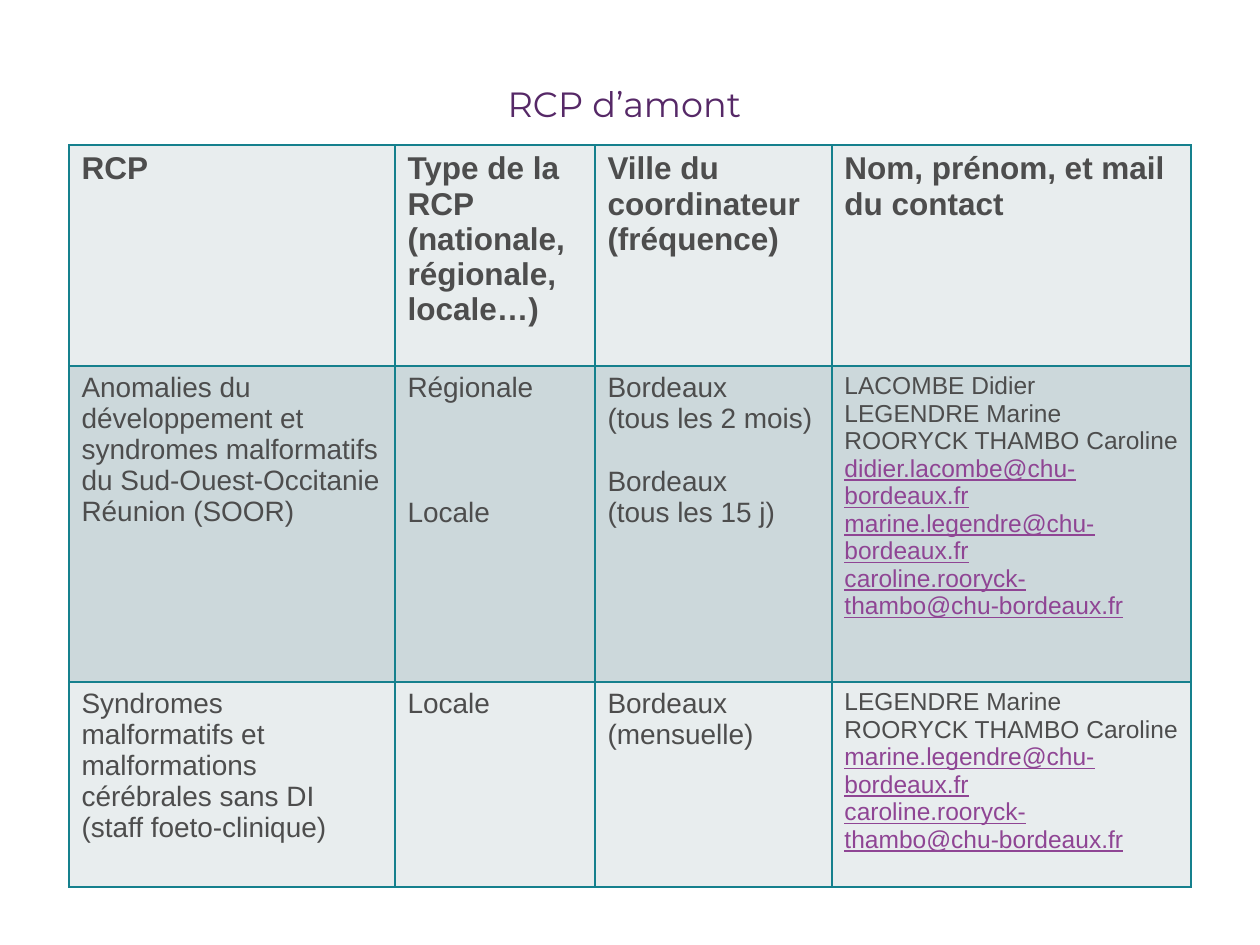
from dataclasses import dataclass

from lxml.etree import SubElement
from pptx import Presentation
from pptx.dml.color import RGBColor
from pptx.enum.text import MSO_ANCHOR, PP_ALIGN
from pptx.oxml.ns import qn
from pptx.util import Emu, Pt

PURPLE = RGBColor(0x56, 0x28, 0x67)
LINK = RGBColor(0x8F, 0x45, 0x94)
GREY = RGBColor(0x4D, 0x4D, 0x4D)
TEAL = RGBColor(0x15, 0x80, 0x8D)
PALE = RGBColor(0xE8, 0xED, 0xEE)
DARKER = RGBColor(0xCC, 0xD8, 0xDB)

PX_PER_INCH = 126
LINE_HEIGHT = 1.117
COLUMN_WIDTHS = [326, 200, 237, 359]
ROW_HEIGHTS = [221, 316, 205]
HEADER_SIZE, BODY_SIZE, CONTACT_SIZE = 18, 16, 14


@dataclass
class Line:
    text: str
    lines_before: int = 0


LEGENDRE = Line("LEGENDRE Marine")
ROORYCK = Line("ROORYCK THAMBO Caroline")
LEGENDRE_MAIL = Line("marine.legendre@chu-bordeaux.fr")
ROORYCK_MAIL = Line("caroline.rooryck-thambo@chu-bordeaux.fr")

ROWS = [
    [
        [Line("RCP")],
        [Line("Type de la RCP (nationale, régionale, locale…)")],
        [Line("Ville du coordinateur"), Line("(fréquence)")],
        [Line("Nom, prénom, et mail du contact")],
    ],
    [
        [Line("Anomalies du développement et syndromes malformatifs "
              "du Sud-Ouest-Occitanie Réunion (SOOR)")],
        [Line("Régionale"), Line("Locale", 3)],
        [Line("Bordeaux"), Line("(tous les 2 mois)"),
         Line("Bordeaux", 1), Line("(tous les 15 j)")],
        [Line("LACOMBE Didier"), LEGENDRE, ROORYCK,
         Line("didier.lacombe@chu-bordeaux.fr"), LEGENDRE_MAIL, ROORYCK_MAIL],
    ],
    [
        [Line("Syndromes malformatifs et malformations cérébrales sans DI"),
         Line("(staff foeto-clinique)")],
        [Line("Locale")],
        [Line("Bordeaux"), Line("(mensuelle)")],
        [LEGENDRE, ROORYCK, LEGENDRE_MAIL, ROORYCK_MAIL],
    ],
]


def px(length):
    return Emu(round(length * 914400 / PX_PER_INCH))


def add_run(paragraph, text, font_name, size, color, bold=False, underline=False):
    run = paragraph.add_run()
    run.text = text
    run.font.name = font_name
    run.font.size = Pt(size)
    run.font.color.rgb = color
    run.font.bold = bold
    run.font.underline = underline


def format_title(title):
    title.left, title.top, title.width, title.height = px(228), px(76), px(793), px(79)
    frame = title.text_frame
    frame.word_wrap = True
    frame.vertical_anchor = MSO_ANCHOR.TOP
    paragraph = frame.paragraphs[0]
    paragraph.alignment = PP_ALIGN.CENTER
    add_run(paragraph, "RCP d’amont", "Montserrat", 20, PURPLE)


def set_borders(cell):
    properties = cell._tc.get_or_add_tcPr()
    for side in ("lnL", "lnR", "lnT", "lnB"):
        border = SubElement(properties, qn(f"a:{side}"), w=str(Pt(1)))
        fill = SubElement(border, qn("a:solidFill"))
        SubElement(fill, qn("a:srgbClr"), val=str(TEAL))


def fill_cell(cell, lines, color, size, bold):
    set_borders(cell)
    cell.fill.solid()
    cell.fill.fore_color.rgb = color
    frame = cell.text_frame
    for index, line in enumerate(lines):
        paragraph = frame.add_paragraph() if index else frame.paragraphs[0]
        if line.lines_before:
            paragraph.space_before = Pt(round(line.lines_before * size * LINE_HEIGHT, 1))
        is_mail = "@" in line.text
        add_run(paragraph, line.text, "Arial", size, LINK if is_mail else GREY,
                bold, is_mail)


def add_meeting_table(slide):
    table = slide.shapes.add_table(
        len(ROWS), len(COLUMN_WIDTHS), px(69), px(145),
        px(sum(COLUMN_WIDTHS)), px(sum(ROW_HEIGHTS))).table
    table.horz_banding = False
    for column, width in zip(table.columns, COLUMN_WIDTHS):
        column.width = px(width)
    for row_index, (row, height) in enumerate(zip(table.rows, ROW_HEIGHTS)):
        row.height = px(height)
        is_header = row_index == 0
        color = DARKER if row_index % 2 else PALE
        for column_index, lines in enumerate(ROWS[row_index]):
            is_contact = column_index == len(COLUMN_WIDTHS) - 1
            body_size = CONTACT_SIZE if is_contact else BODY_SIZE
            size = HEADER_SIZE if is_header else body_size
            fill_cell(row.cells[column_index], lines, color, size, is_header)


def main():
    presentation = Presentation()
    presentation.slide_width, presentation.slide_height = px(1260), px(945)
    slide = presentation.slides.add_slide(presentation.slide_layouts[5])
    format_title(slide.shapes.title)
    add_meeting_table(slide)
    presentation.save("out.pptx")


if __name__ == "__main__":
    main()
